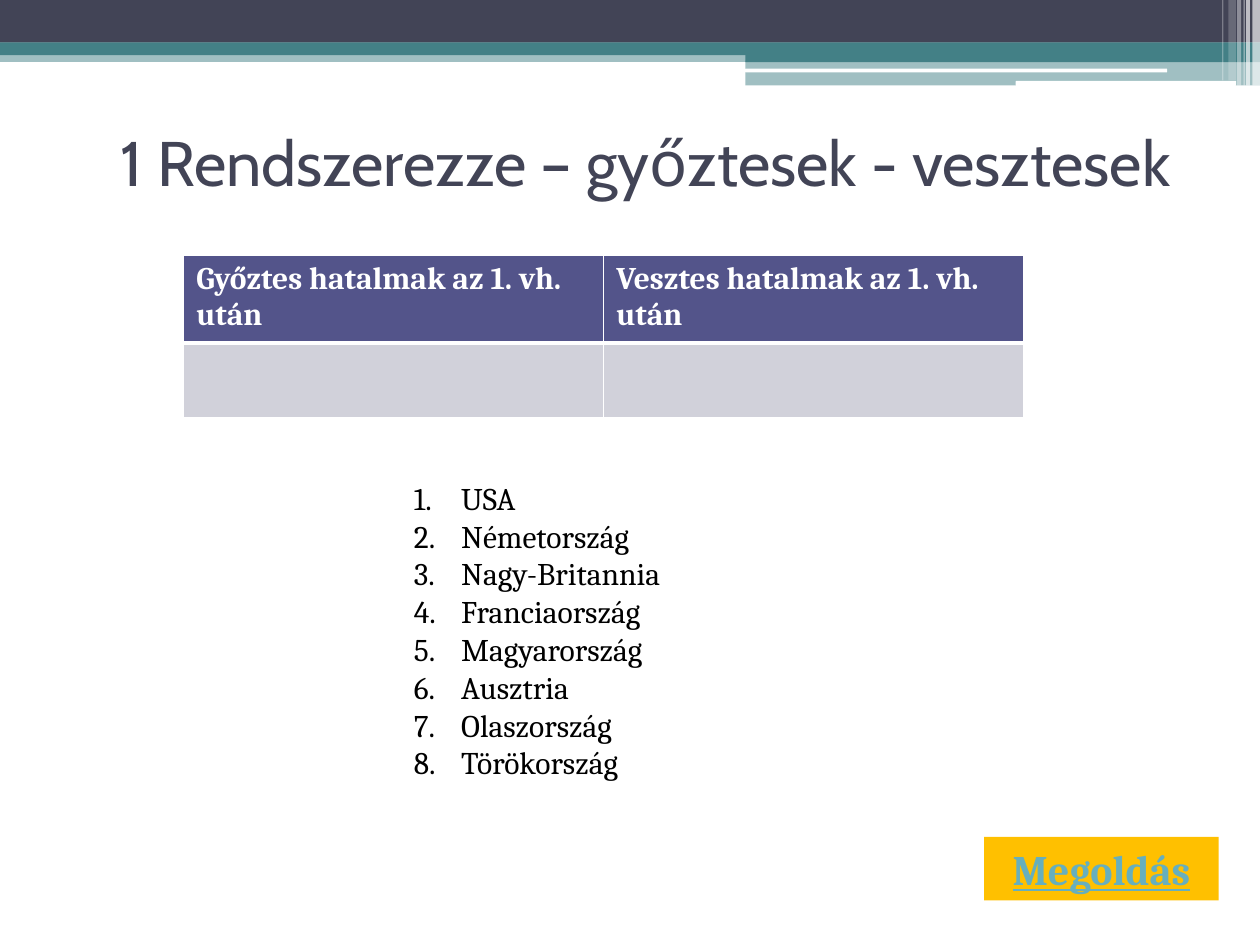
from dataclasses import dataclass

from lxml.etree import SubElement
from pptx import Presentation
from pptx.dml.color import RGBColor
from pptx.enum.shapes import MSO_SHAPE as Shape
from pptx.enum.text import MSO_ANCHOR as Anchor, PP_ALIGN as Align
from pptx.oxml.ns import qn
from pptx.util import Pt


@dataclass(frozen=True)
class Theme:
    dark: str = "424456"
    teal: str = "438086"
    white: str = "FFFFFF"
    black: str = "000000"
    header: str = "53548A"
    body: str = "D1D1DA"
    gold: str = "FFC000"
    link: str = "67AFBD"
    heading_font: str = "Cabin"
    body_font: str = "Cambria"
    title_size: int = 36
    button_size: int = 24
    text_size: int = 18


class SlideBuilder:
    def __init__(self, slide, theme):
        self.slide = slide
        self.theme = theme

    def style(self, para, size, color, font=None, bold=False, underline=False):
        for span in para.runs:
            span.font.name = font or self.theme.body_font
            span.font.size = Pt(size)
            span.font.bold = bold
            span.font.underline = underline
            span.font.color.rgb = RGBColor.from_string(color)

    def bar(self, left, top, width, height, color, opacity=100, kind=Shape.RECTANGLE):
        box = self.slide.shapes.add_shape(
            kind, Pt(left), Pt(top), Pt(width), Pt(height))
        box.shadow.inherit = False
        box.line.fill.background()
        box.fill.solid()
        box.fill.fore_color.rgb = RGBColor.from_string(color)
        if opacity < 100:
            fill_color = box.fill._xPr.find(qn("a:solidFill"))[0]
            SubElement(fill_color, qn("a:alpha"), val=str(opacity * 1000))
        return box

    def text(self, left, top, width, height):
        box = self.slide.shapes.add_textbox(Pt(left), Pt(top), Pt(width), Pt(height))
        box.text_frame.word_wrap = True
        return box.text_frame

    def title(self, wording, *place):
        frame = self.text(*place)
        frame.vertical_anchor = Anchor.MIDDLE
        frame.text = wording
        para = frame.paragraphs[0]
        para.alignment = Align.CENTER
        self.style(para, self.theme.title_size, self.theme.dark, self.theme.heading_font)

    def button(self, wording, *place):
        frame = self.bar(*place, self.theme.gold).text_frame
        frame.word_wrap = False
        frame.vertical_anchor = Anchor.MIDDLE
        frame.text = wording
        para = frame.paragraphs[0]
        para.alignment = Align.CENTER
        self.style(para, self.theme.button_size, self.theme.link,
                   bold=True, underline=True)

    def numbered_list(self, items, indent, *place):
        frame = self.text(*place)
        frame.text = "\n".join(items)
        for para in frame.paragraphs:
            self.style(para, self.theme.text_size, self.theme.black)
            properties = para._p.get_or_add_pPr()
            properties.set("marL", str(Pt(indent)))
            properties.set("indent", str(-Pt(indent)))
            SubElement(properties, qn("a:buFont"), typeface="+mj-lt")
            SubElement(properties, qn("a:buAutoNum"), type="arabicPeriod")

    def borders(self, cell, bottom):
        properties = cell._tc.get_or_add_tcPr()
        for side, width in (("L", 1), ("R", 1), ("T", 1), ("B", bottom)):
            line = SubElement(properties, qn(f"a:ln{side}"), w=str(Pt(width)))
            fill = SubElement(line, qn("a:solidFill"))
            SubElement(fill, qn("a:srgbClr"), val=self.theme.white)

    def table(self, headings, heights, left, top, width):
        table = self.slide.shapes.add_table(
            len(heights), len(headings), Pt(left), Pt(top), Pt(width),
            Pt(sum(heights))).table
        for row, height in zip(table.rows, heights):
            row.height = Pt(height)
        for column, heading in enumerate(headings):
            table.cell(0, column).text = heading
            self.style(table.cell(0, column).text_frame.paragraphs[0],
                       self.theme.text_size, self.theme.white, bold=True)
            for row, (color, bottom) in enumerate(
                    ((self.theme.header, 3), (self.theme.body, 1))):
                cell = table.cell(row, column)
                self.borders(cell, bottom)
                cell.fill.solid()
                cell.fill.fore_color.rgb = RGBColor.from_string(color)

    def banner(self):
        theme = self.theme
        self.bar(0, 28.8, 720, 6.6, theme.teal, 50)
        self.bar(0, 0, 720, 24.4, theme.dark)
        self.bar(0, 24.3, 720, 7.2, theme.teal)
        self.bar(426, 28.4, 294, 7.2, theme.teal)
        self.bar(426, 34.6, 294, 14.2, theme.teal, 50)
        for left, top, width, height in ((425.8, 39.2, 241.2, 2.2),
                                         (580.4, 46.2, 126, 2.9)):
            self.bar(left, top, width, height, theme.white, kind=Shape.ROUNDED_RECTANGLE)
        for left, width, height, opacity in (
                (715.6, 4.4, 49, 65), (712.1, 2.2, 49, 65), (710.6, 0.7, 49, 60),
                (707, 2.2, 49, 40), (702, 4.3, 46, 20), (698.4, 0.7, 46, 30)):
            self.bar(left, 0, width, height, theme.white, opacity)


def main():
    deck = Presentation()
    deck.slide_width, deck.slide_height = Pt(720), Pt(540)
    page = SlideBuilder(deck.slides.add_slide(deck.slide_layouts[6]), Theme())
    page.banner()
    page.title("1 Rendszerezze – győztesek - vesztesek", 45, 50.4, 648, 84)
    page.button("Megoldás", 562.4, 478.2, 134, 36.3)
    page.table(("Győztes hatalmak az 1. vh. után", "Vesztes hatalmak az 1. vh. után"),
               (50, 43), 105, 145.6, 480)
    page.numbered_list(
        ("USA", "Németország", "Nagy-Britannia", "Franciaország",
         "Magyarország", "Ausztria", "Olaszország", "Törökország"),
        27, 229.5, 270, 244, 181.5)
    deck.save("out.pptx")


if __name__ == "__main__":
    main()
